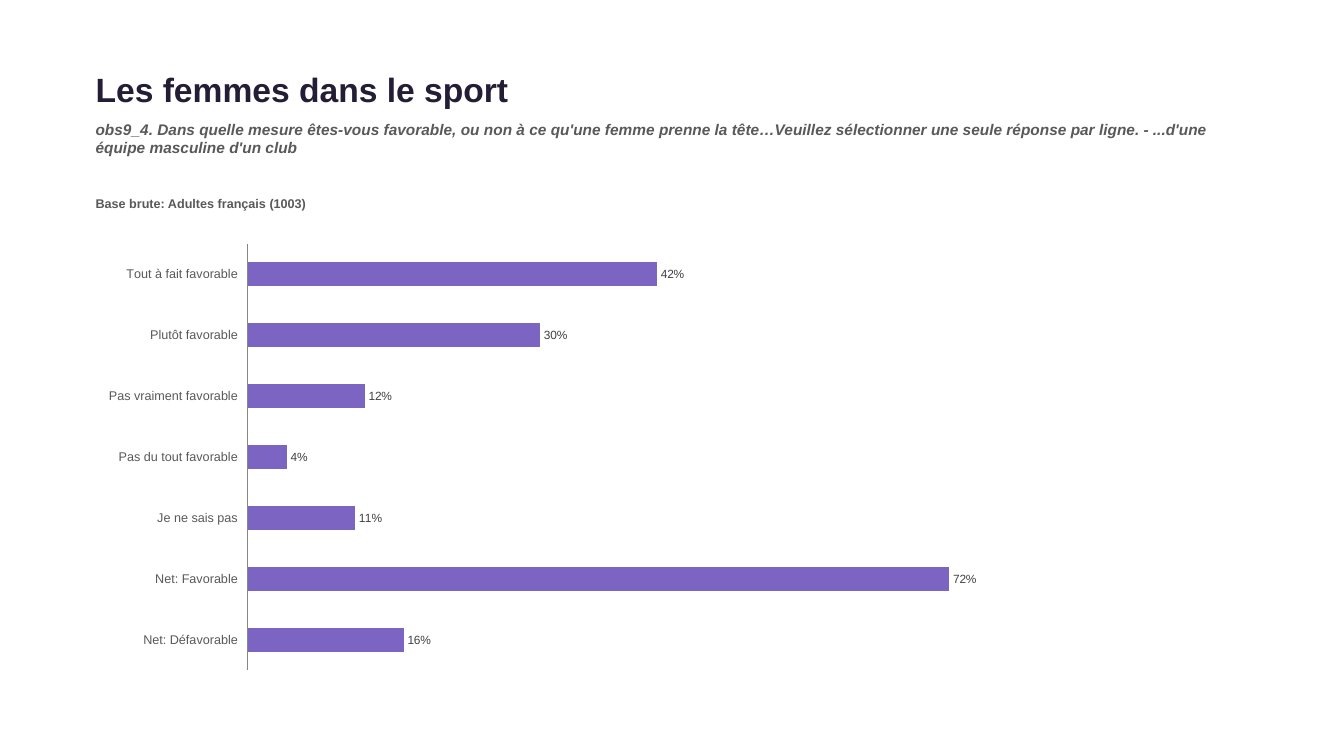
from pptx import Presentation
from pptx.chart.data import CategoryChartData
from pptx.dml.color import RGBColor
from pptx.enum.chart import XL_CHART_TYPE, XL_LABEL_POSITION, XL_TICK_LABEL_POSITION, XL_TICK_MARK
from pptx.enum.text import MSO_ANCHOR
from pptx.util import Inches, Pt

BAR = XL_CHART_TYPE.BAR_CLUSTERED
OUTER = XL_LABEL_POSITION.OUTSIDE_END
LOW = XL_TICK_LABEL_POSITION.LOW
NO_TICK = XL_TICK_MARK.NONE
TOP = MSO_ANCHOR.TOP

INK = RGBColor(0x24, 0x1D, 0x36)
GREY = RGBColor(0x59, 0x59, 0x59)
DARK = RGBColor(0x40, 0x40, 0x40)
RULE = RGBColor(0x86, 0x86, 0x86)
BLACK = RGBColor(0, 0, 0)
PURPLE = RGBColor(0x7C, 0x64, 0xC3)

WIDTH, HEIGHT = 13.33, 7.5
LEFT, SPAN = 0.85 / WIDTH, 11.63 / WIDTH

ANSWERS = [
    ("Tout à fait favorable", 0.42),
    ("Plutôt favorable", 0.3),
    ("Pas vraiment favorable", 0.12),
    ("Pas du tout favorable", 0.04),
    ("Je ne sais pas", 0.11),
    ("Net: Favorable", 0.72),
    ("Net: Défavorable", 0.16),
]


class Page:
    face = "Arial"

    def __init__(self, deck):
        self.wide, self.high = deck.slide_width, deck.slide_height
        self.slide = deck.slides.add_slide(deck.slide_layouts[6])

    def frame(self, left, top, width, height):
        return (round(left * self.wide), round(top * self.high),
                round(width * self.wide), round(height * self.high))

    def style(self, font, size, color, bold=False, italic=False):
        font.name, font.size = self.face, Pt(size)
        font.bold, font.italic = bold, italic
        font.color.rgb = color

    def text(self, words, top, height, size, color, italic=False):
        box = self.slide.shapes.add_textbox(*self.frame(LEFT, top, SPAN, height))
        body = box.text_frame
        body.word_wrap = True
        body.vertical_anchor = TOP
        run = body.paragraphs[0].add_run()
        run.text = words
        self.style(run.font, size, color, True, italic)

    def bars(self, rows, top, width, height):
        data = CategoryChartData(number_format="0%")
        names, values = zip(*reversed(rows))
        data.categories = names
        data.add_series("Series 1", values)
        area = self.frame(LEFT, top, width, height)
        chart = self.slide.shapes.add_chart(BAR, *area, data).chart
        self.style(chart.font, 18, BLACK)
        chart.has_legend = False
        chart.has_title = False
        self.axes(chart)
        plot = chart.plots[0]
        plot.vary_by_categories = False
        plot.gap_width, plot.overlap = 150, -10
        series = plot.series[0]
        series.invert_if_negative = False
        series.format.fill.solid()
        series.format.fill.fore_color.rgb = PURPLE
        labels = series.data_labels
        labels.show_value = True
        labels.position = OUTER
        labels.number_format = "0%"
        labels.number_format_is_linked = False
        self.style(labels.font, 8.5, DARK)

    def axes(self, chart):
        cat, val = chart.category_axis, chart.value_axis
        cat.tick_label_position = LOW
        cat.major_tick_mark = cat.minor_tick_mark = NO_TICK
        cat.format.line.color.rgb = RULE
        cat.format.line.width = Pt(0.75)
        self.style(cat.tick_labels.font, 9, GREY)
        val.minimum_scale, val.maximum_scale = 0, 1
        val.major_unit = 0.1
        val.has_major_gridlines = False
        val.visible = False


def main():
    deck = Presentation()
    deck.slide_width, deck.slide_height = Inches(WIDTH), Inches(HEIGHT)
    page = Page(deck)
    page.text("Les femmes dans le sport", 0.63 / HEIGHT, 0.5 / HEIGHT, 24, INK)
    page.text("obs9_4. Dans quelle mesure êtes-vous favorable, ou non à ce qu'une femme "
              "prenne la tête…Veuillez sélectionner une seule réponse par ligne. - "
              "...d'une équipe masculine d'un club",
              1.14 / HEIGHT, 0.75 / HEIGHT, 11, GREY, italic=True)
    page.text("Base brute: Adultes français (1003)", 1.89 / HEIGHT, 0.44 / HEIGHT, 9, GREY)
    page.bars(ANSWERS, 2.33 / HEIGHT, 11.5 / WIDTH, 4.41 / HEIGHT)
    deck.save("out.pptx")


if __name__ == "__main__":
    main()
